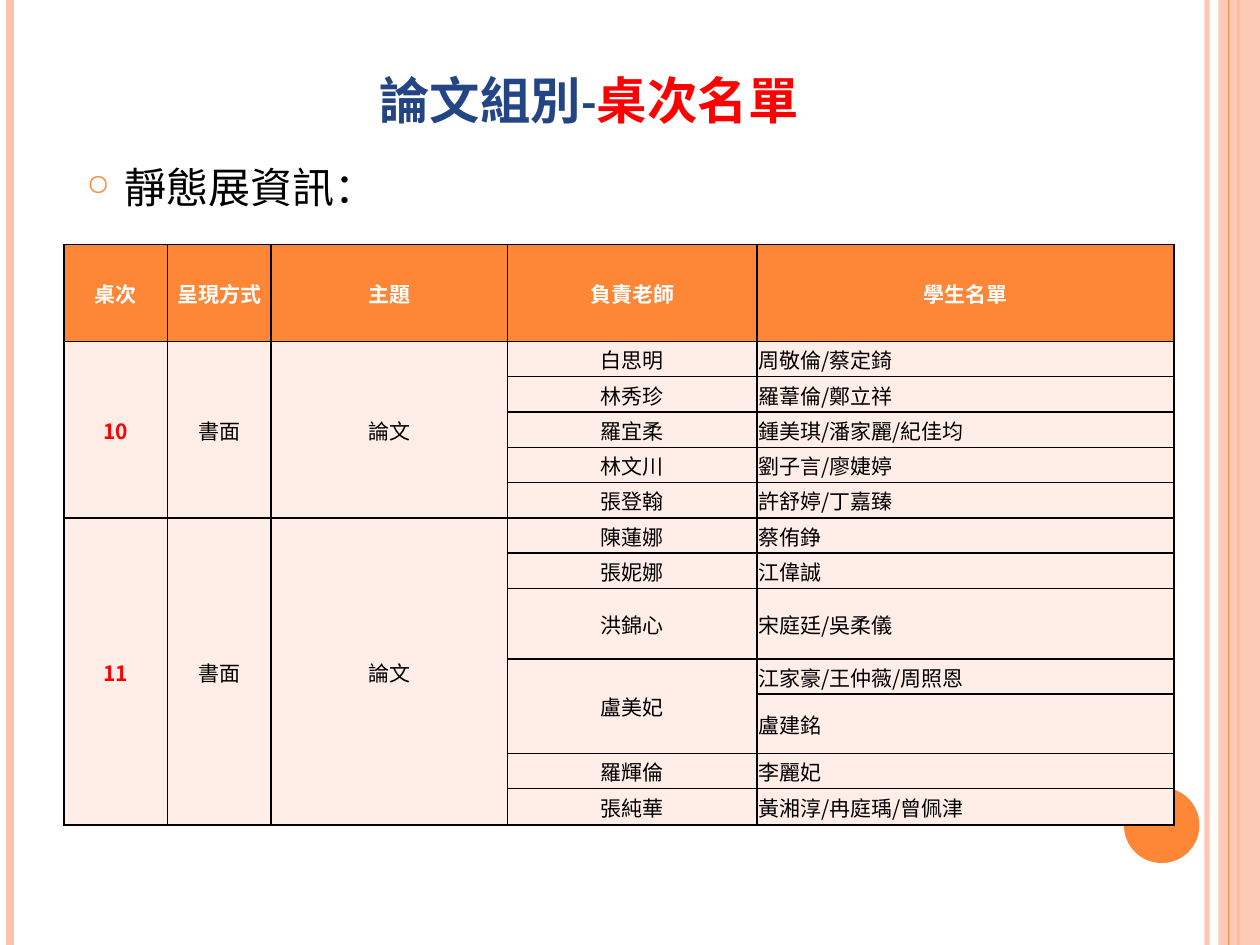
import pptx
import pptx.util
import pptx.dml.color
import pptx.enum.shapes
import pptx.enum.text
import pptx.oxml.ns
import pptx.oxml.xmlchemy

Inches = pptx.util.Inches
qn = pptx.oxml.ns.qn
make = pptx.oxml.xmlchemy.OxmlElement
form = pptx.enum.shapes.MSO_SHAPE
side = pptx.enum.text.PP_ALIGN
anchor = pptx.enum.text.MSO_ANCHOR
SANS = "Noto Sans CJK JP"
PINK, ORANGE, PALE = "FEC3AE", "FE8637", "FFEDE8"
RED, BLACK, WHITE, NAVY = "FF0000", "000000", "FFFFFF", "244583"


def hue(code):
    return pptx.dml.color.RGBColor.from_string(code)


def write(par, text, size, color, bold=False, face=SANS):
    run = par.add_run()
    run.text = text
    run.font.size = pptx.util.Pt(size)
    run.font.color.rgb = hue(color)
    run.font.bold = bold
    run.font.name = face


deck = pptx.Presentation()
deck.slide_width, deck.slide_height = Inches(10), Inches(7.5)
slide = deck.slides.add_slide(deck.slide_layouts[6])
shapes = slide.shapes
slide.background.fill.solid()
slide.background.fill.fore_color.rgb = hue(WHITE)

# Side stripes: a band between thin upright lines
lines = [(9.58, PINK, 3, 93), (0.08, PINK, 4.5, 100),
         (9.83, ORANGE, 1.5, 100), (9.75, ORANGE, 0.75, 100)]
faded = []
for x, color, width, alpha in lines:
    if x == 9.75:
        band = shapes.add_shape(form.RECTANGLE, Inches(9.67), 0,
                                Inches(0.33), Inches(7.5))
        band.fill.solid()
        band.fill.fore_color.rgb = hue(PINK)
        band.line.fill.background()
        band.shadow.inherit = False
        faded.append((band, 87))
    line = shapes.add_connector(pptx.enum.shapes.MSO_CONNECTOR.STRAIGHT,
                                Inches(x), 0, Inches(x), Inches(7.5))
    line.line.color.rgb = hue(color)
    line.line.width = pptx.util.Pt(width)
    props = line.element.find(qn("p:spPr"))
    props.append(make("a:effectLst"))
    if alpha < 100:
        faded.append((line, alpha))
for item, alpha in faded:
    tint = next(item.element.iter(qn("a:srgbClr")))
    clear = make("a:alpha")
    clear.set("val", str(alpha * 1000))
    tint.append(clear)

# Corner disc
disc = shapes.add_shape(form.OVAL, Inches(8.92), Inches(6.25),
                        Inches(0.6), Inches(0.6))
disc.fill.solid()
disc.fill.fore_color.rgb = hue(ORANGE)
disc.line.fill.background()
disc.shadow.inherit = False

# Title in small caps
title = shapes.add_textbox(Inches(0.59), Inches(0.29), Inches(8.17), Inches(0.81))
title.text_frame.word_wrap = True
title.text_frame.vertical_anchor = anchor.BOTTOM
par = title.text_frame.paragraphs[0]
par.alignment = side.CENTER
write(par, "論文組別-", 36, NAVY, True, "Cambria")
write(par, "桌次名單", 36, RED, True, "Cambria")
for props in title.element.iter(qn("a:rPr")):
    props.set("cap", "small")

# Bulleted lead line
body = shapes.add_textbox(Inches(0.59), Inches(1.23), Inches(8.17), Inches(5.33))
body.text_frame.word_wrap = True
par = body.text_frame.paragraphs[0]
par.space_before = pptx.util.Pt(6)
write(par, "靜態展資訊：", 24, BLACK)
props = next(body.element.iter(qn("a:pPr")))
props.set("marL", str(Inches(0.3)))
props.set("indent", str(-Inches(0.3)))
tint = make("a:buClr")
code = make("a:srgbClr")
code.set("val", ORANGE)
tint.append(code)
scale = make("a:buSzPct")
scale.set("val", "70000")
mark = make("a:buChar")
mark.set("char", "○")
props.extend([tint, scale, mark])

# Table: an empty text continues the cell above
rows = [
    ("桌次", "呈現方式", "主題", "負責老師", "學生名單"),
    ("10", "書面", "論文", "白思明", "周敬倫/蔡定錡"),
    ("", "", "", "林秀珍", "羅葦倫/鄭立祥"),
    ("", "", "", "羅宜柔", "鍾美琪/潘家麗/紀佳均"),
    ("", "", "", "林文川", "劉子言/廖婕婷"),
    ("", "", "", "張登翰", "許舒婷/丁嘉臻"),
    ("11", "書面", "論文", "陳蓮娜", "蔡侑錚"),
    ("", "", "", "張妮娜", "江偉誠"),
    ("", "", "", "洪錦心", "宋庭廷/吳柔儀"),
    ("", "", "", "盧美妃", "江家豪/王仲薇/周照恩"),
    ("", "", "", "", "盧建銘"),
    ("", "", "", "羅輝倫", "李麗妃"),
    ("", "", "", "張純華", "黃湘淳/冉庭瑀/曾佩津"),
]
wide = [0.82, 0.82, 1.88, 1.98, 3.31]
tall = [0.77] + [0.28] * 7 + [0.56, 0.28, 0.47, 0.28, 0.29]
frame = shapes.add_table(len(rows), len(wide), Inches(0.51), Inches(1.94),
                         Inches(8.82), Inches(4.59))
table = frame.table
for col, width in zip(table.columns, wide):
    col.width = Inches(width)
for row, height in zip(table.rows, tall):
    row.height = Inches(height)

for r, row in enumerate(rows):
    for c, text in enumerate(row):
        cell = table.cell(r, c)
        cell.margin_left = cell.margin_right = cell.margin_top = Inches(0.01)
        cell.margin_bottom = 0
        cell.vertical_anchor = anchor.MIDDLE
        cell.fill.solid()
        cell.fill.fore_color.rgb = hue(PALE if r else ORANGE)
        par = cell.text_frame.paragraphs[0]
        par.alignment = side.LEFT if r and c == 4 else side.CENTER
        par.font.size = pptx.util.Pt(12)
        if text:
            color = WHITE if r == 0 else RED if c == 0 else BLACK
            write(par, text, 12, color, r == 0 or c == 0)

for c in range(4):
    tops = [r for r, row in enumerate(rows) if row[c]] + [len(rows)]
    for top, end in zip(tops, tops[1:]):
        if end - top > 1:
            table.cell(top, c).merge(table.cell(end - 1, c))

# Black cell borders
for props in frame.element.iter(qn("a:tcPr")):
    for n, edge in enumerate(["a:lnL", "a:lnR", "a:lnT", "a:lnB"]):
        rule = make(edge)
        rule.set("w", str(pptx.util.Pt(1)))
        fill = make("a:solidFill")
        code = make("a:srgbClr")
        code.set("val", BLACK)
        fill.append(code)
        rule.append(fill)
        props.insert(n, rule)

# East Asian font for every run
for latin in list(slide.element.iter(qn("a:latin"))):
    east = make("a:ea")
    east.set("typeface", SANS)
    latin.addnext(east)

deck.save("out.pptx")
